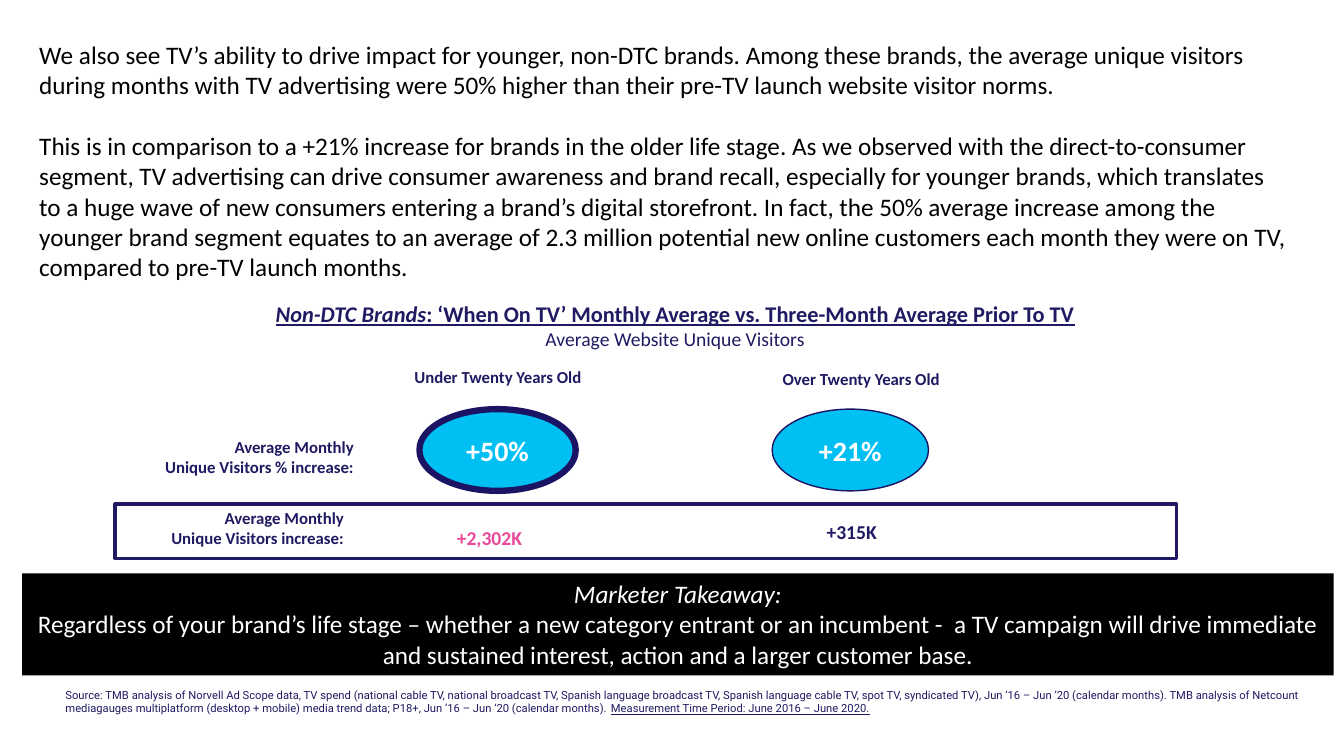
from pptx import Presentation
from pptx.dml.color import RGBColor
from pptx.enum.shapes import MSO_SHAPE as SHAPE
from pptx.enum.text import MSO_ANCHOR as ANCHOR, PP_ALIGN as ALIGN
from pptx.util import Cm, Pt

COLORS = {
    "black": "000000", "white": "FFFFFF", "navy": "1F1A62",
    "outline": "1B1464", "cyan": "00C0F3", "pink": "E84A99",
}


def color(name):
    """Return the named palette colour."""
    return RGBColor.from_string(COLORS[name])


def lengths(box):
    """Turn a box in centimetres into lengths."""
    return [Cm(v) for v in box]


def write(sp, paragraphs, size, ink, align=ALIGN.LEFT, anchor=ANCHOR.TOP,
          gap=0, font="Calibri", **style):
    """Write paragraphs of (text, overrides) runs into a shape."""
    tf = sp.text_frame
    tf.word_wrap = True
    tf.vertical_anchor = anchor
    for i, runs in enumerate(paragraphs):
        p = tf.paragraphs[0] if i == 0 else tf.add_paragraph()
        p.alignment = align
        p.space_before = Pt(gap if i else 0)
        for text, overrides in runs:
            r = p.add_run()
            r.text = text
            r.font.name = font
            r.font.size = Pt(size)
            r.font.color.rgb = color(ink)
            for key, value in {**style, **overrides}.items():
                setattr(r.font, key, value)


def add_text(slide, box, paragraphs, size, ink, **options):
    """Add a text box."""
    sp = slide.shapes.add_textbox(*lengths(box))
    write(sp, paragraphs, size, ink, **options)


def add_panel(slide, kind, box, fill, line=None, width=1):
    """Add a filled shape with an optional outline."""
    sp = slide.shapes.add_shape(kind, *lengths(box))
    sp.shadow.inherit = False
    sp.fill.solid()
    sp.fill.fore_color.rgb = color(fill)
    if line:
        sp.line.color.rgb = color(line)
        sp.line.width = Pt(width)
    else:
        sp.line.fill.background()
    return sp


def add_intro(slide, box):
    """Add the two opening paragraphs."""
    add_text(slide, box, [
        [("We also see TV’s ability to drive impact for younger, non-DTC brands. "
          "Among these brands, the average unique visitors during months with TV "
          "advertising were 50% higher than their pre-TV launch website visitor "
          "norms.", {})],
        [("This is in comparison to a +21% increase for brands in the older life "
          "stage. As we observed with the direct-to-consumer segment, TV "
          "advertising can drive consumer awareness and brand recall, especially "
          "for younger brands, which translates to a huge wave of new consumers "
          "entering a brand’s digital storefront. In fact, the 50% average "
          "increase among the younger brand segment equates to an average of 2.3 "
          "million potential new online customers each month they were on TV, "
          "compared to pre-TV launch months.", {})],
    ], 18, "black", gap=22)


def add_heading(slide, box):
    """Add the comparison title and subtitle."""
    title = {"bold": True, "underline": True}
    add_text(slide, box, [
        [("Non-DTC Brands", {**title, "italic": True}),
         (": ‘When On TV’ Monthly Average vs. Three-Month Average Prior To TV",
          title)],
        [("Average Website Unique Visitors", {"size": Pt(14)})],
    ], 16, "navy", align=ALIGN.CENTER)


def add_row_label(slide, box, measure):
    """Add a right-aligned row label."""
    add_text(slide, box, [[("Average Monthly", {})], [(measure, {})]],
             12, "navy", align=ALIGN.RIGHT, bold=True)


def add_age_group(slide, left, top, name, name_box, percent, outline,
                  visitors, visitors_box, ink):
    """Add one age group: its name, percentage oval and visitor increase."""
    x, y, w = name_box
    add_text(slide, (left + x, top + y, w, 0.76), [[(name, {})]],
             12, "navy", align=ALIGN.CENTER, bold=True)
    oval = add_panel(slide, SHAPE.OVAL, (left, top + 1.19, 3.94, 2.06),
                     "cyan", "outline", outline)
    write(oval, [[(percent, {})]], 20, "white", align=ALIGN.CENTER,
          anchor=ANCHOR.MIDDLE, bold=True)
    x, y, w = visitors_box
    add_text(slide, (left + x, top + y, w, 0.86), [[(visitors, {})]],
             14, ink, align=ALIGN.RIGHT, bold=True)


def add_comparison(slide, box):
    """Add the comparison of younger and older brands."""
    left, top, width, height = box
    add_panel(slide, SHAPE.RECTANGLE,
              (left + 2.9, top + height - 1.37, width - 7.12, 1.37),
              "white", "navy", 2.25)
    add_row_label(slide, (left + 0.25, top + 1.75, 8.92, 1.27),
                  "Unique Visitors % increase:")
    add_row_label(slide, (left, top + 3.55, 8.92, 1.27),
                  "Unique Visitors increase:")
    add_age_group(slide, left + 10.57, top, "Under Twenty Years Old",
                  (-0.89, 0, 5.74), "+50%", 4.5,
                  "+2,302K", (-0.26, 4.01, 3.1), "pink")
    add_age_group(slide, left + 19.46, top, "Over Twenty Years Old",
                  (-0.13, 0.05, 4.75), "+21%", 1,
                  "+315K", (0.45, 3.86, 2.44), "navy")


def add_takeaway(slide, box):
    """Add the black takeaway band."""
    sp = add_panel(slide, SHAPE.RECTANGLE, box, "black")
    write(sp, [
        [("Marketer Takeaway:", {"italic": True})],
        [("Regardless of your brand’s life stage – whether a new category entrant "
          "or an incumbent -  a TV campaign will drive immediate and sustained "
          "interest, action and a larger customer base.", {})],
    ], 18, "white", align=ALIGN.CENTER)


def add_source(slide, box):
    """Add the source note."""
    add_text(slide, box, [[
        ("Source: TMB analysis of Norvell Ad Scope data, TV spend (national cable "
         "TV, national broadcast TV, Spanish language broadcast TV, Spanish "
         "language cable TV, spot TV, syndicated TV), Jun ‘16 – Jun ’20 (calendar "
         "months). TMB analysis of Netcount mediagauges multiplatform (desktop + "
         "mobile) media trend data; P18+, Jun ’16 – Jun ‘20 (calendar months). ",
         {}),
        ("Measurement Time Period: June 2016 – June 2020.", {"underline": True}),
    ]], 8, "navy", font="Roboto")


def main():
    """Build and save the slide."""
    prs = Presentation()
    prs.slide_width, prs.slide_height = Cm(33.87), Cm(19.05)
    slide = prs.slides.add_slide(prs.slide_layouts[6])
    add_intro(slide, (0.74, 0.86, 32.03, 6.42))
    add_takeaway(slide, (0.56, 14.45, 33.05, 2.57))
    add_comparison(slide, (0, 9.12, 33.87, 4.95))
    add_heading(slide, (0.43, 7.44, 33.17, 1.55))
    add_source(slide, (1.4, 17.22, 31.95, 0.97))
    prs.save("out.pptx")


if __name__ == "__main__":
    main()
